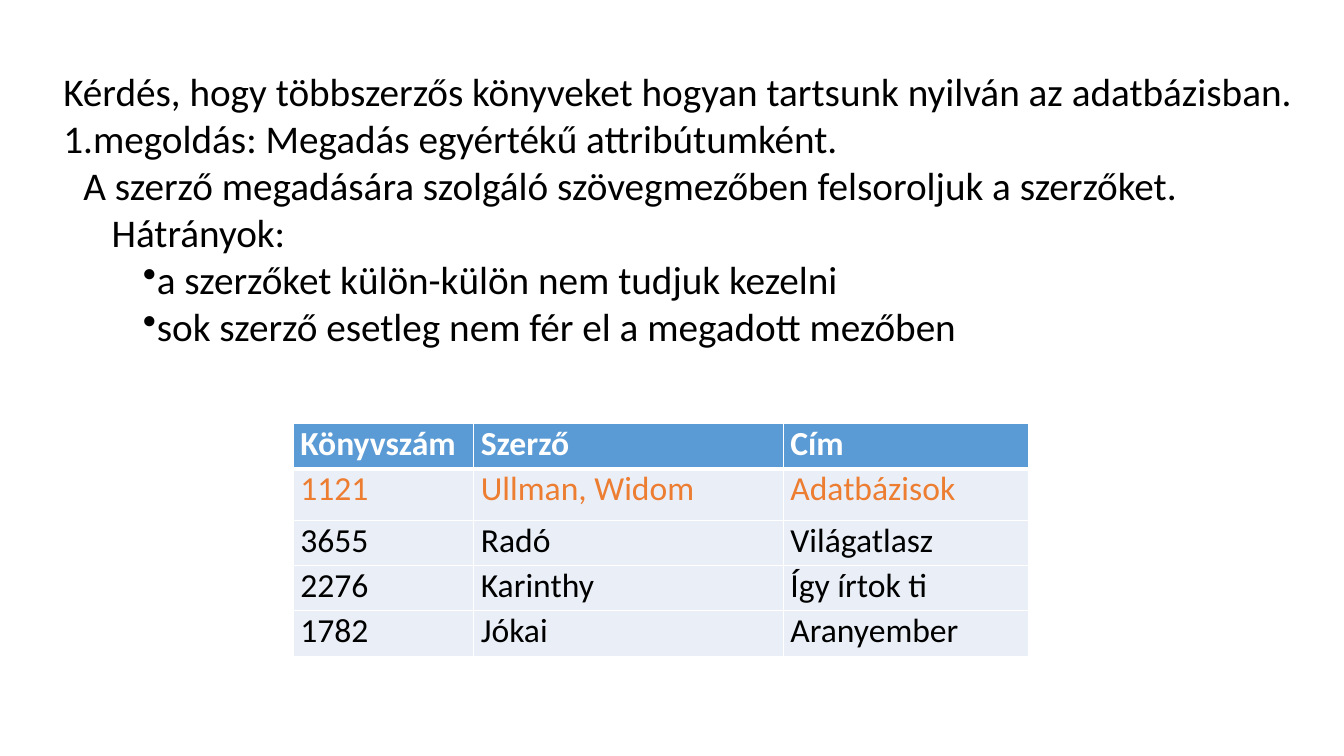
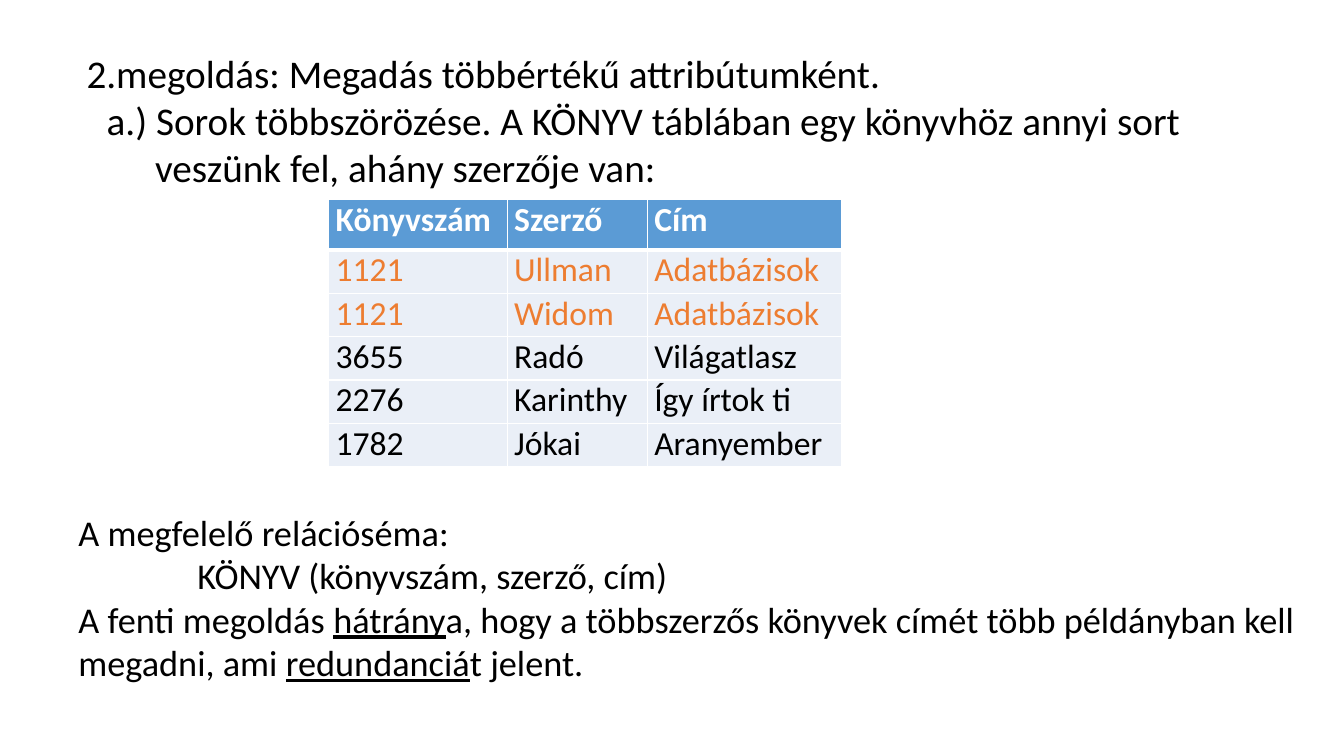
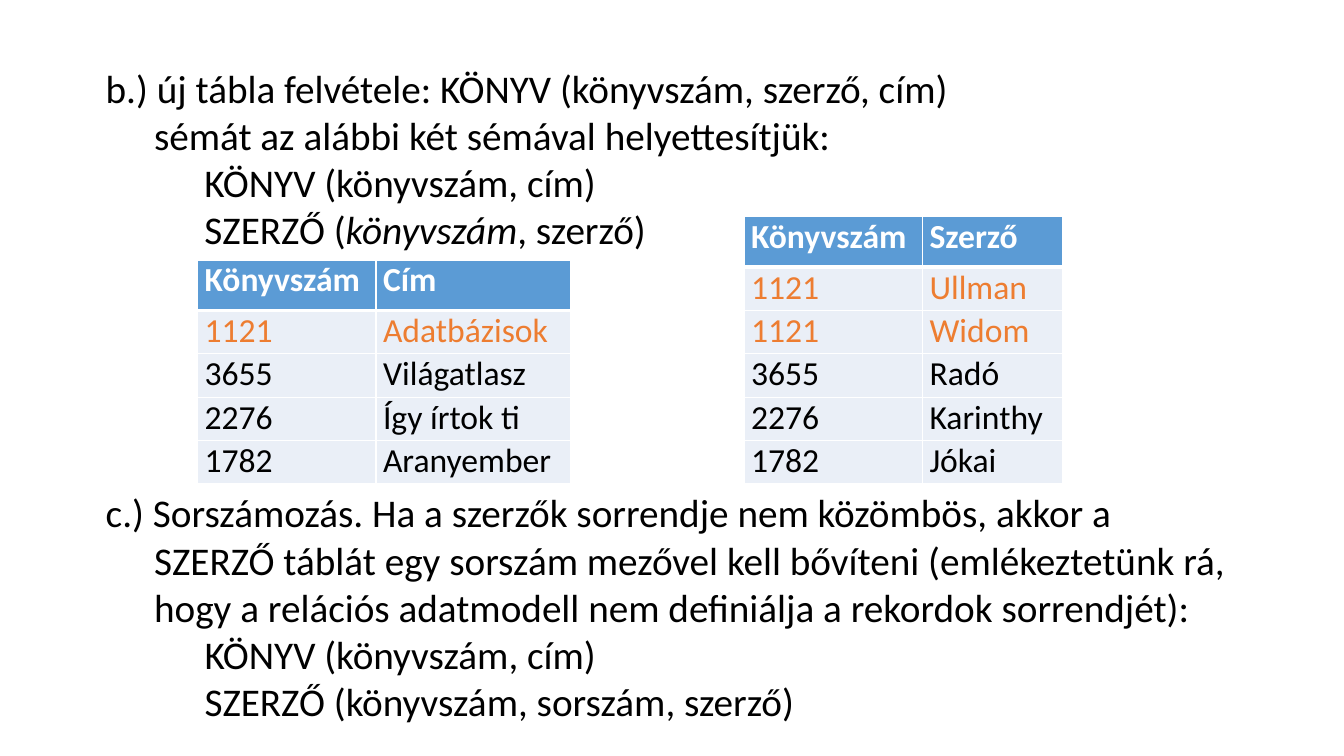
from dataclasses import dataclass
from pptx import Presentation
from pptx.dml.color import RGBColor
from pptx.oxml.ns import qn
from pptx.util import Emu, Pt
from lxml.etree import SubElement

PX = 9144


@dataclass(frozen=True)
class Theme:
    font: str = "Calibri"
    ink: str = "000000"
    white: str = "FFFFFF"
    head: str = "5B9BD5"
    body: str = "EAEFF7"
    mark: str = "ED7D31"
    text: float = 28
    note: float = 25.9
    cell: float = 24
    thin: int = 1
    thick: int = 3


def px(n):
    return Emu(n * PX)


class Deck:
    def __init__(self, theme):
        self.theme = theme
        self.prs = Presentation()
        self.prs.slide_width, self.prs.slide_height = px(1333), px(750)

    def page(self):
        self.slide = self.prs.slides.add_slide(self.prs.slide_layouts[6])

    def style(self, run, size, color, bold=False):
        font = run.font
        font.name, font.size, font.bold = self.theme.font, Pt(size), bold
        font.color.rgb = RGBColor.from_string(color)

    def text(self, box, lines, size=None):
        frame = self.slide.shapes.add_textbox(*map(px, box)).text_frame
        frame.word_wrap = True
        for i, (left, first, bullet, parts) in enumerate(lines):
            para = frame.add_paragraph() if i else frame.paragraphs[0]
            props = para._p.get_or_add_pPr()
            props.set("marL", str(px(left)))
            props.set("indent", str(px(first)))
            if bullet:
                SubElement(props, qn("a:buChar"), char=bullet)
            for part, look in parts:
                run = para.add_run()
                run.text = part
                self.style(run, size or self.theme.text, self.theme.ink)
                run.font.underline = look == "u"
                run.font.italic = look == "i"

    def edge(self, cell, row):
        props = cell._tc.get_or_add_tcPr()
        heavy = {0: "lnB", 1: "lnT"}.get(row)
        for at, side in enumerate(("lnL", "lnR", "lnT", "lnB")):
            width = self.theme.thick if side == heavy else self.theme.thin
            line = SubElement(props, qn("a:" + side), w=str(Pt(width)))
            fill = SubElement(line, qn("a:solidFill"))
            SubElement(fill, qn("a:srgbClr"), val=self.theme.white)
            props.insert(at, line)

    def table(self, left, top, cols, highs, rows, mark):
        theme = self.theme
        size = (left, top, sum(cols), sum(highs))
        table = self.slide.shapes.add_table(len(rows), len(cols), *map(px, size)).table
        table.horz_banding = False
        for col, wide in zip(table.columns, cols):
            col.width = px(wide)
        for r, (row, high) in enumerate(zip(rows, highs)):
            table.rows[r].height = px(high)
            color = theme.white if r == 0 else theme.mark if row[0] == mark else theme.ink
            for c, value in enumerate(row):
                cell = table.cell(r, c)
                cell.margin_left = cell.margin_right = px(7)
                cell.margin_top = cell.margin_bottom = 0
                cell.fill.solid()
                cell.fill.fore_color.rgb = RGBColor.from_string(theme.body if r else theme.head)
                cell.text_frame.text = value
                self.style(cell.text_frame.paragraphs[0].runs[0], theme.cell, color, r == 0)
                self.edge(cell, r)


def line(*parts, left=0, first=0, bullet=None):
    return left, first, bullet, [(p, "") if isinstance(p, str) else p for p in parts]


HEAD = ("Könyvszám", "Szerző", "Cím")
MARK = "1121"
REST = [
    ("3655", "Radó", "Világatlasz"),
    ("2276", "Karinthy", "Így írtok ti"),
    ("1782", "Jókai", "Aranyember"),
]
JOINED = [HEAD, (MARK, "Ullman, Widom", "Adatbázisok"), *REST]
SPLIT = [HEAD, (MARK, "Ullman", "Adatbázisok"), (MARK, "Widom", "Adatbázisok"), *REST]
WIDE = (177, 139, 193)
STEP, HANG, DEEP = 20, 68, 118


def pick(deck, left, top, *cols):
    rows = list(dict.fromkeys(tuple(row[c] for c in cols) for row in SPLIT))
    highs = [50] + [43] * (len(rows) - 1)
    deck.table(left, top, [WIDE[c] for c in cols], highs, rows, MARK)


def main():
    deck = Deck(Theme())

    deck.page()
    deck.text((53, 62, 1246, 613), [
        line("Kérdés, hogy többszerzős könyveket hogyan tartsunk nyilván az adatbázisban."),
        line("1.megoldás: Megadás egyértékű attribútumként."),
        line("A szerző megadására szolgáló szövegmezőben felsoroljuk a szerzőket.", left=STEP),
        line("Hátrányok:", left=48),
        line("a szerzőket külön-külön nem tudjuk kezelni", left=79, bullet="•"),
        line("sok szerző esetleg nem fér el a megadott mezőben", left=79, bullet="•"),
    ])
    deck.table(291, 420, (179, 307, 243), (45, 51, 45, 45, 45), JOINED, MARK)

    deck.page()
    deck.text((76, 44, 1182, 154), [
        line("2.megoldás: Megadás többértékű attribútumként."),
        line("a.) Sorok többszörözése. A KÖNYV táblában egy könyvhöz annyi sort "
             "veszünk fel, ahány szerzője van:", left=HANG, first=STEP - HANG),
    ])
    deck.text((68, 501, 1227, 194), [
        line("A megfelelő relációséma:"),
        line("KÖNYV (könyvszám, szerző, cím)", left=DEEP),
        line("A fenti megoldás ", ("hátrány", "u"),
             "a, hogy a többszerzős könyvek címét több példányban kell megadni, ami ",
             ("redundanciá", "u"), "t jelent."),
    ], deck.theme.note)
    pick(deck, 326, 198, 0, 1, 2)

    deck.page()
    deck.text((75, 59, 1184, 238), [
        line("b.) új tábla felvétele: KÖNYV (könyvszám, szerző, cím)", left=STEP),
        line("sémát az alábbi két sémával helyettesítjük:", left=HANG),
        line("KÖNYV (könyvszám, cím)", left=DEEP),
        line("SZERZŐ (", ("könyvszám", "i"), ", szerző)", left=DEEP),
    ])
    deck.text((75, 480, 1152, 246), [
        line("c.) Sorszámozás. Ha a szerzők sorrendje nem közömbös, akkor a SZERZŐ táblát "
             "egy sorszám mezővel kell bővíteni (emlékeztetünk rá, hogy a relációs "
             "adatmodell nem definiálja a rekordok sorrendjét):", left=HANG, first=STEP - HANG),
        line("KÖNYV (könyvszám, cím)", left=DEEP),
        line("SZERZŐ (könyvszám, sorszám, szerző)", left=DEEP),
    ])
    pick(deck, 196, 258, 0, 2)
    pick(deck, 738, 215, 0, 1)

    deck.prs.save("out.pptx")


if __name__ == "__main__":
    main()
